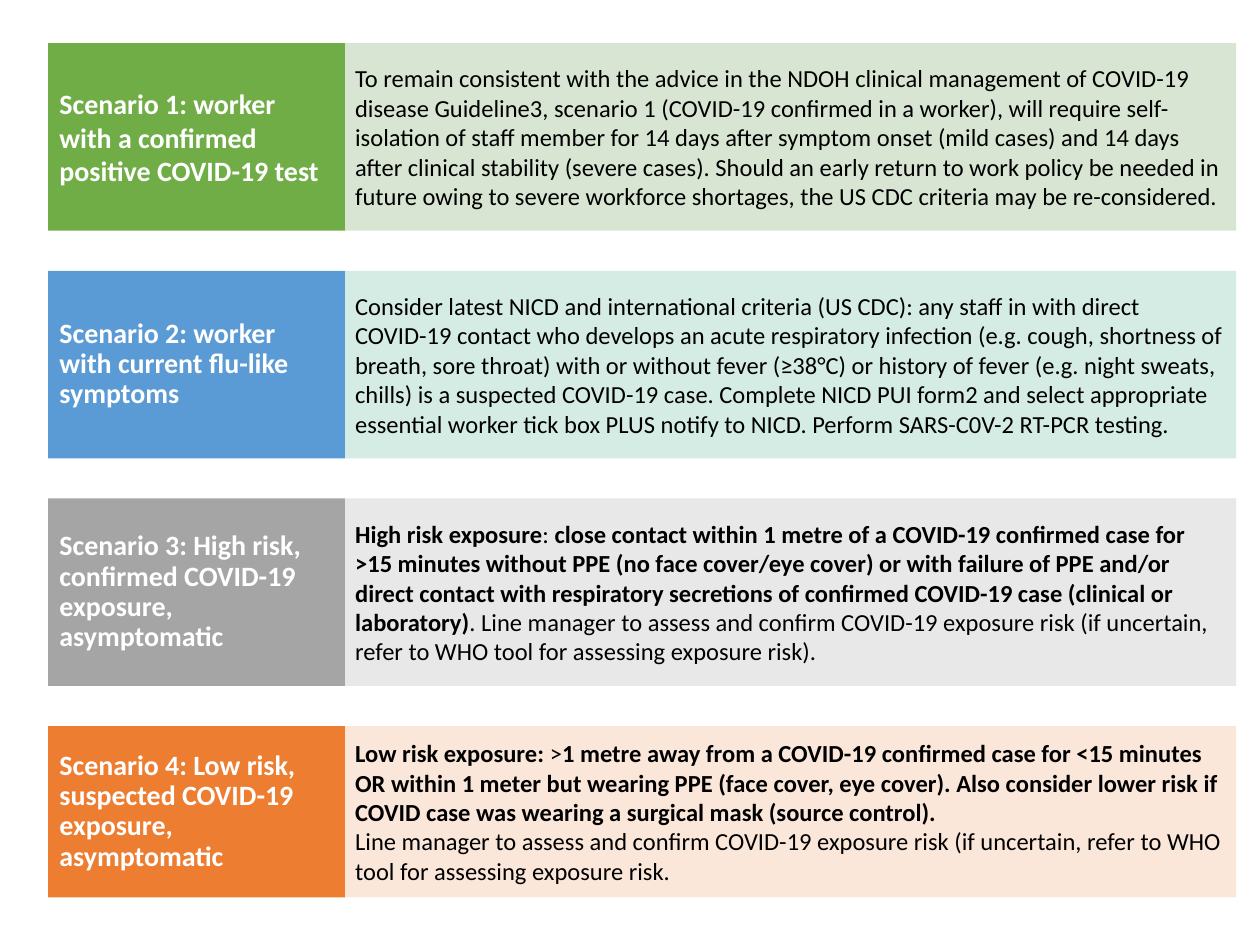
from pptx import Presentation
from pptx.dml.color import RGBColor
from pptx.enum.shapes import MSO_SHAPE
from pptx.enum.text import MSO_ANCHOR, PP_ALIGN
from pptx.oxml.ns import qn
from pptx.util import Cm, Pt
from lxml.etree import SubElement

WHITE = RGBColor(0xFF, 0xFF, 0xFF)
BLACK = RGBColor(0x00, 0x00, 0x00)
GREEN = RGBColor(0x70, 0xAD, 0x47)
PALE_GREEN = RGBColor(0xD5, 0xE3, 0xCF)
BLUE = RGBColor(0x5B, 0x9B, 0xD5)
PALE_TEAL = RGBColor(0xD0, 0xEA, 0xE1)
GREY = RGBColor(0xA5, 0xA5, 0xA5)
PALE_GREY = RGBColor(0xE7, 0xE6, 0xE6)
ORANGE = RGBColor(0xED, 0x7D, 0x31)
PALE_ORANGE = RGBColor(0xFB, 0xE5, 0xD6)

LABEL_LEFT, LABEL_WIDTH = 0.97, 5.99
DETAIL_LEFT, DETAIL_WIDTH = LABEL_LEFT + LABEL_WIDTH, 17.96
FIRST_TOP, ROW_PITCH = 0.87, 4.59

SCENARIOS = [
    (GREEN, PALE_GREEN, 3.78, 1.0,
     "Scenario 1: worker with a confirmed positive COVID-19 test",
     [[("To remain consistent with the advice in the NDOH clinical management of COVID-19 "
        "disease Guideline3, scenario 1 (COVID-19 confirmed in a worker), will require "
        "self-isolation of staff member for 14 days after symptom onset (mild cases) and "
        "14 days after clinical stability (severe cases). Should an early return to work "
        "policy be needed in future owing to severe workforce shortages, the US CDC "
        "criteria may be re-considered.", False)]]),
    (BLUE, PALE_TEAL, 3.78, 0.9,
     "Scenario 2: worker with current flu-like symptoms",
     [[("Consider latest NICD and international criteria (US CDC): any staff in with direct "
        "COVID-19 contact who develops an acute respiratory infection (e.g. cough, shortness "
        "of breath, sore throat) with or without fever (≥38°C) or history of fever (e.g. "
        "night sweats, chills) is a suspected COVID-19 case. Complete NICD PUI form2 and "
        "select appropriate essential worker tick box PLUS notify to NICD. Perform "
        "SARS-C0V-2 RT-PCR testing.", False)]]),
    (GREY, PALE_GREY, 3.78, 0.9,
     "Scenario 3: High risk, confirmed COVID-19 exposure, asymptomatic",
     [[("High risk exposure", True),
       (": ", False),
       ("close contact within 1 metre of a COVID-19 confirmed case for >15 minutes without "
        "PPE (no face cover/eye cover) or with failure of PPE and/or direct contact with "
        "respiratory secretions of confirmed COVID-19 case (clinical or laboratory)", True),
       (". Line manager to assess and confirm COVID-19 exposure risk (if uncertain, refer "
        "to WHO tool for assessing exposure risk).", False)]]),
    (ORANGE, PALE_ORANGE, 3.45, 0.9,
     "Scenario 4: Low risk, suspected COVID-19 exposure, asymptomatic",
     [[("Low risk exposure: ", True),
       (">", False),
       ("1 metre away from a COVID-19 confirmed case for <15 minutes OR within 1 meter but "
        "wearing PPE (face cover, eye cover). Also consider lower risk if COVID case was "
        "wearing a surgical mask (source control).", True)],
      [("Line manager to assess and confirm COVID-19 exposure risk (if uncertain, refer to "
        "WHO tool for assessing exposure risk.", False)]]),
]


def add_panel(page, left, top, width, height, fill, margins):
    box = page.shapes.add_shape(
        MSO_SHAPE.RECTANGLE, Cm(left), Cm(top), Cm(width), Cm(height))
    box.shadow.inherit = False
    box.fill.solid()
    box.fill.fore_color.rgb = fill
    box.line.fill.background()
    frame = box.text_frame
    frame.word_wrap = True
    frame.vertical_anchor = MSO_ANCHOR.MIDDLE
    frame.margin_left = frame.margin_right = Cm(margins[0])
    frame.margin_top = frame.margin_bottom = Cm(margins[1])
    return box


def write_paragraphs(frame, paragraphs, size, color, spacing):
    for index, spans in enumerate(paragraphs):
        para = frame.add_paragraph() if index else frame.paragraphs[0]
        para.alignment = PP_ALIGN.LEFT
        para.line_spacing = spacing
        for text, bold in spans:
            span = para.add_run()
            span.text = text
            span.font.name = "Calibri"
            span.font.size = Pt(size)
            span.font.bold = bold
            span.font.color.rgb = color


deck = Presentation()
deck.slide_width = Cm(25.4)
deck.slide_height = Cm(19.05)
page = deck.slides.add_slide(deck.slide_layouts[6])

for row, (strong, pale, height, spacing, title, details) in enumerate(SCENARIOS):
    top = FIRST_TOP + row * ROW_PITCH

    label = add_panel(page, LABEL_LEFT, top, LABEL_WIDTH, height, strong, (0.23, 0.41))
    write_paragraphs(label.text_frame, [[(title, True)]], 16, WHITE, spacing)

    detail = add_panel(page, DETAIL_LEFT, top, DETAIL_WIDTH, height, pale, (0.2, 0.64))
    color_element = detail.fill._xPr.find(qn("a:solidFill")).find(qn("a:srgbClr"))
    SubElement(color_element, qn("a:alpha")).set("val", "90000")
    write_paragraphs(detail.text_frame, details, 14, BLACK, 1.0)

deck.save("out.pptx")
